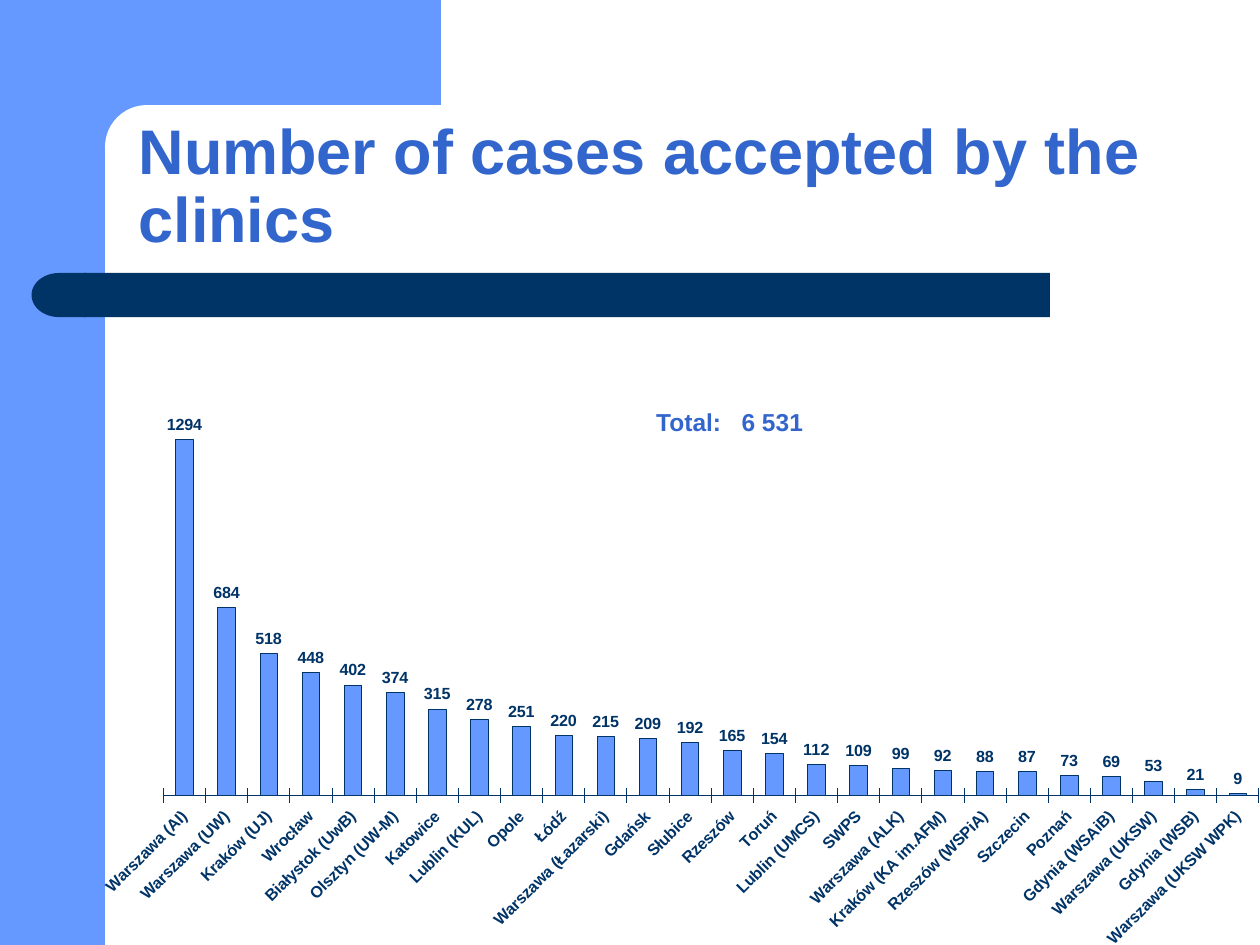
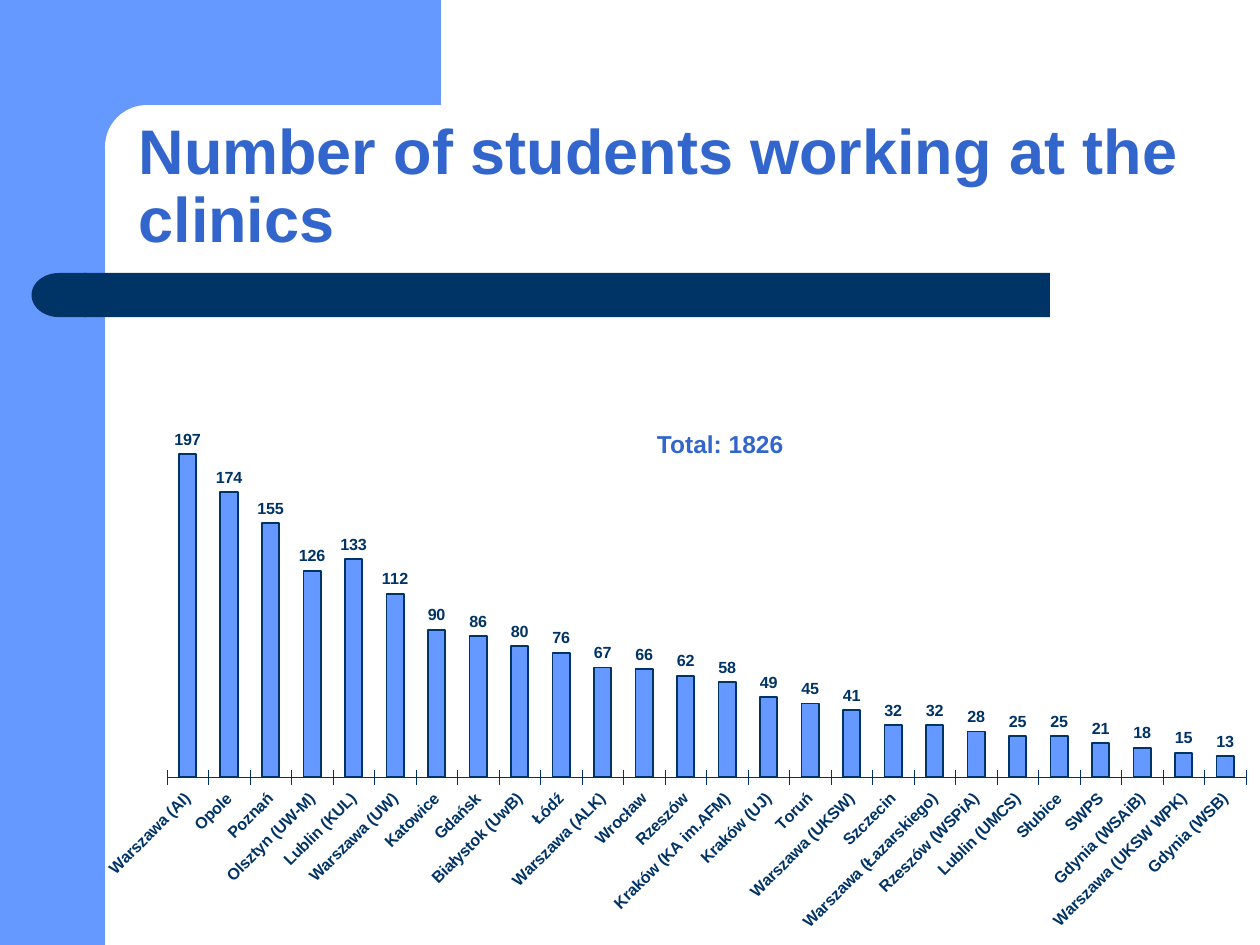
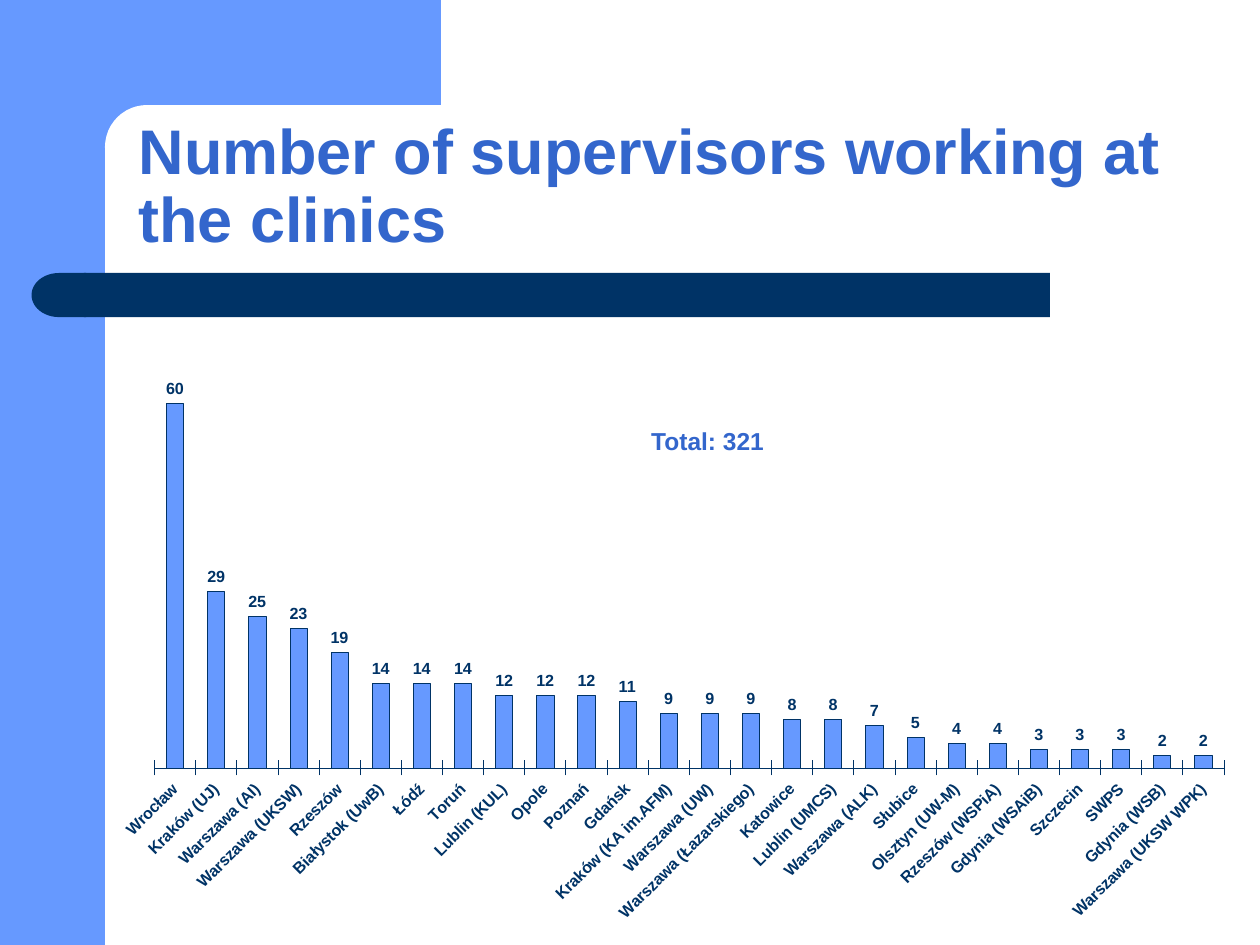
from lxml.etree import SubElement
from pptx import Presentation
from pptx.chart.data import CategoryChartData
from pptx.dml.color import RGBColor
from pptx.enum.chart import XL_CHART_TYPE as ChartType, XL_LABEL_POSITION as LabelPosition
from pptx.enum.chart import XL_TICK_LABEL_POSITION as TickLabels, XL_TICK_MARK as TickMark
from pptx.enum.shapes import MSO_SHAPE as Preset
from pptx.enum.text import MSO_ANCHOR as Anchor, MSO_AUTO_SIZE as AutoSize, PP_ALIGN as Align
from pptx.oxml import parse_xml
from pptx.oxml.ns import nsdecls, qn
from pptx.util import Inches, Pt

COLUMNS, ROWS = 120, 90
FONT = "Arial"
SKY, NAVY, BLUE, WHITE = "6699FF", "003366", "3366CC", "FFFFFF"
colour = RGBColor.from_string

presentation = Presentation()
presentation.slide_width, presentation.slide_height = Inches(10), Inches(7.5)
column = presentation.slide_width / COLUMNS
row = presentation.slide_height / ROWS


def place(left, top, width, height):
    return [round(left * column), round(top * row), round(width * column), round(height * row)]


def write(shape, text, size=14, align=Align.LEFT, anchor=Anchor.TOP, line_spacing=1.0):
    frame = shape.text_frame
    frame.word_wrap = True
    frame.auto_size = AutoSize.NONE
    frame.vertical_anchor = anchor
    paragraph = frame.paragraphs[0]
    paragraph.alignment = align
    paragraph.line_spacing = line_spacing
    run = paragraph.add_run()
    run.text = text
    run.font.name, run.font.size, run.font.bold = FONT, Pt(size), True
    run.font.color.rgb = colour(BLUE)


pages = [
    {
        "title": "Number of cases accepted by the clinics",
        "total": "Total:   6 531", "total_box": (46.8, 38.2, 45.4, 4),
        "chart_box": (9, 29.9, 111, 61.4), "plot": (0.059, 0.15, 0.94, 0.597),
        "maximum": 1400, "outline": 0.25,
        "clinics": {
            "Warszawa (AI)": 1294, "Warszawa (UW)": 684, "Kraków (UJ)": 518, "Wrocław": 448,
            "Białystok (UwB)": 402, "Olsztyn (UW-M)": 374, "Katowice": 315, "Lublin (KUL)": 278,
            "Opole": 251, "Łódź": 220, "Warszawa (Łazarski)": 215, "Gdańsk": 209,
            "Słubice": 192, "Rzeszów": 165, "Toruń": 154, "Lublin (UMCS)": 112, "SWPS": 109,
            "Warszawa (ALK)": 99, "Kraków (KA im.AFM)": 92, "Rzeszów (WSPiA)": 88,
            "Szczecin": 87, "Poznań": 73, "Gdynia (WSAiB)": 69, "Warszawa (UKSW)": 53,
            "Gdynia (WSB)": 21, "Warszawa (UKSW WPK)": 9,
        },
    },
    {
        "title": "Number of students working at the clinics",
        "total": "Total: 1826", "total_box": (43.9, 40.3, 49.4, 4),
        "chart_box": (9, 25, 111, 65.3), "plot": (0.062, 0.153, 0.926, 0.598),
        "maximum": 250, "outline": 1,
        "clinics": {
            "Warszawa (AI)": 197, "Opole": 174, "Poznań": 155, "Olsztyn (UW-M)": 126,
            "Lublin (KUL)": 133, "Warszawa (UW)": 112, "Katowice": 90, "Gdańsk": 86,
            "Białystok (UwB)": 80, "Łódź": 76, "Warszawa (ALK)": 67, "Wrocław": 66,
            "Rzeszów": 62, "Kraków (KA im.AFM)": 58, "Kraków (UJ)": 49, "Toruń": 45,
            "Warszawa (UKSW)": 41, "Szczecin": 32, "Warszawa (Łazarskiego)": 32,
            "Rzeszów (WSPiA)": 28, "Lublin (UMCS)": 25, "Słubice": 25, "SWPS": 21,
            "Gdynia (WSAiB)": 18, "Warszawa (UKSW WPK)": 15, "Gdynia (WSB)": 13,
        },
    },
    {
        "title": "Number of supervisors working at the clinics",
        "total": "Total: 321", "total_box": (42.7, 40, 49.4, 4),
        "chart_box": (8, 22.3, 110, 67.7), "plot": (0.061, 0.153, 0.926, 0.598),
        "maximum": 70, "outline": 0.25,
        "clinics": {
            "Wrocław": 60, "Kraków (UJ)": 29, "Warszawa (AI)": 25, "Warszawa (UKSW)": 23,
            "Rzeszów": 19, "Białystok (UwB)": 14, "Łódź": 14, "Toruń": 14,
            "Lublin (KUL)": 12, "Opole": 12, "Poznań": 12, "Gdańsk": 11,
            "Kraków (KA im.AFM)": 9, "Warszawa (UW)": 9, "Warszawa (Łazarskiego)": 9,
            "Katowice": 8, "Lublin (UMCS)": 8, "Warszawa (ALK)": 7, "Słubice": 5,
            "Olsztyn (UW-M)": 4, "Rzeszów (WSPiA)": 4, "Gdynia (WSAiB)": 3, "Szczecin": 3,
            "SWPS": 3, "Gdynia (WSB)": 2, "Warszawa (UKSW WPK)": 2,
        },
    },
]

layout = presentation.slide_layouts.get_by_name("Title Only")
slides = [presentation.slides.add_slide(layout) for page in pages]

bands = [
    (Preset.RECTANGLE, (0, 0, 10, 90), SKY, None, 0),
    (Preset.RECTANGLE, (9, 0, 33, 14), SKY, None, 0),
    (Preset.ROUNDED_RECTANGLE, (10, 10, 67, 8), WHITE, 0.5, 0),
    (Preset.ROUNDED_RECTANGLE, (8, 26, 92, 4.2), NAVY, 0, 0),
    (Preset.FLOWCHART_DELAY, (3, 26, 5.2, 4.2), NAVY, None, 180),
]
for position, (preset, box, fill, rounding, rotation) in enumerate(bands, start=2):
    band = slides[0].shapes.add_shape(preset, *place(*box))
    band.shadow.inherit = False
    band.fill.solid()
    band.fill.fore_color.rgb = colour(fill)
    band.line.fill.background()
    band.rotation = rotation
    if rounding is not None:
        band.adjustments[0] = rounding
    layout.shapes._spTree.insert(position, band._element)

for slide, page in zip(slides, pages):
    title = slide.shapes.title
    title.left, title.top, title.width, title.height = place(12, 10, 105, 15)
    write(title, page["title"], size=36, anchor=Anchor.BOTTOM, line_spacing=0.9)

    total = slide.shapes.add_textbox(*place(*page["total_box"]))
    write(total, page["total"], align=Align.CENTER)

    chart_data = CategoryChartData()
    chart_data.categories = list(page["clinics"])
    chart_data.add_series("Series 1", list(page["clinics"].values()))
    chart = slide.shapes.add_chart(
        ChartType.COLUMN_CLUSTERED, *place(*page["chart_box"]), chart_data).chart
    chart.has_legend = False
    chart.has_title = False

    plot = chart.plots[0]
    plot.gap_width = 140
    plot.vary_by_categories = False
    series = plot.series[0]
    series.format.fill.solid()
    series.format.fill.fore_color.rgb = colour(SKY)
    series.format.line.color.rgb = colour(NAVY)
    series.format.line.width = Pt(page["outline"])
    labels = series.data_labels
    labels.show_value = True
    labels.position = LabelPosition.OUTSIDE_END

    value_axis = chart.value_axis
    value_axis.visible = False
    value_axis.has_major_gridlines = False
    value_axis.minimum_scale, value_axis.maximum_scale = 0, page["maximum"]

    clinic_axis = chart.category_axis
    clinic_axis.major_tick_mark = TickMark.CROSS
    clinic_axis.minor_tick_mark = TickMark.NONE
    clinic_axis.tick_label_position = TickLabels.LOW
    clinic_axis.format.line.color.rgb = colour(NAVY)
    clinic_axis.format.line.width = Pt(0.29)

    for font in (chart.font, clinic_axis.tick_labels.font, labels.font):
        font.name, font.size, font.bold = FONT, Pt(9.2), True
        font.color.rgb = colour(NAVY)
    clinic_axis._element.xpath("c:txPr/a:bodyPr")[0].set("rot", str(-45 * 60000))

    chart_space = chart._chartSpace
    plot_area = chart_space.xpath("c:chart/c:plotArea")[0]
    for old_layout in plot_area.findall(qn("c:layout")):
        plot_area.remove(old_layout)
    plot_layout = parse_xml(f"<c:layout {nsdecls('c')}><c:manualLayout/></c:layout>")
    settings = [("layoutTarget", "inner"), ("xMode", "edge"), ("yMode", "edge")]
    settings += zip("xywh", page["plot"])
    for name, value in settings:
        SubElement(plot_layout[0], qn(f"c:{name}")).set("val", str(value))
    plot_area.insert(0, plot_layout)

    clear = f"<c:spPr {nsdecls('c', 'a')}><a:noFill/><a:ln><a:noFill/></a:ln></c:spPr>"
    plot_area.append(parse_xml(clear))
    chart_space.find(qn("c:chart")).addnext(parse_xml(clear))

presentation.save("out.pptx")
